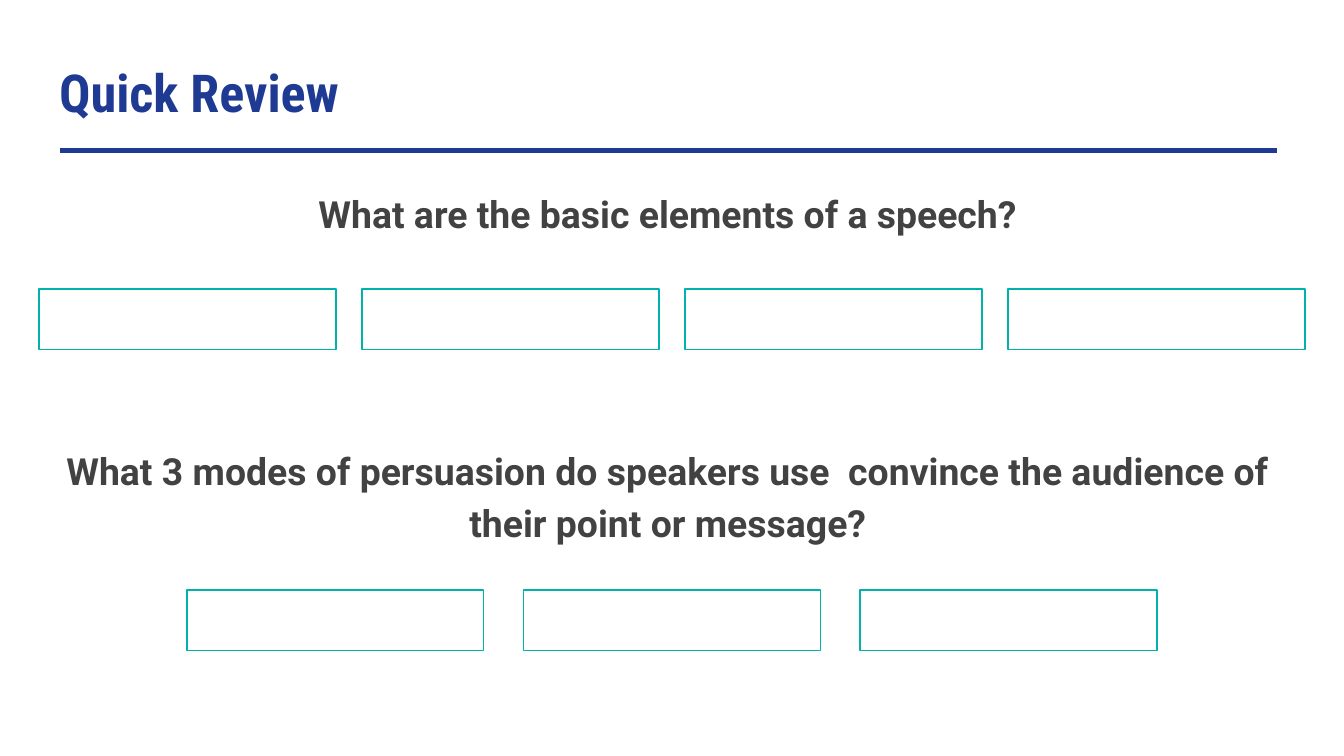
from lxml import etree
from pptx import Presentation, util as u
from pptx.dml.color import RGBColor
from pptx.enum import shapes, text
from pptx.oxml.ns import qn

NAVY, TEAL, GRAY = "1F3A93", "00B2A9", "424242"


def color(target, value):
    target.rgb = RGBColor.from_string(value)


def format_text(shape, font_name, size, font_color, alignment):
    frame = shape.text_frame
    frame.word_wrap = True
    frame.auto_size = text.MSO_AUTO_SIZE.NONE
    frame.vertical_anchor = text.MSO_ANCHOR.TOP
    frame.margin_left = frame.margin_right = u.Inches(0.1)
    frame.margin_top = frame.margin_bottom = u.Inches(0.1)
    for paragraph in frame.paragraphs:
        paragraph.alignment = alignment
        for run in paragraph.runs:
            run.font.name = font_name
            run.font.size = u.Pt(size)
            run.font.bold = True
            color(run.font.color, font_color)


presentation = Presentation()
presentation.slide_width = u.Inches(10)
presentation.slide_height = u.Inches(10 * 9 / 16)
slide = presentation.slides.add_slide(presentation.slide_layouts[5])

# Title and rule
title = slide.shapes.title
title.left, title.top = u.Inches(0.34), u.Inches(0.35)
title.width, title.height = u.Inches(9.32), u.Inches(0.63)
title.text_frame.text = "Quick Review"
format_text(title, "Roboto Condensed", 28, NAVY, text.PP_ALIGN.LEFT)

rule = slide.shapes.add_connector(
    shapes.MSO_CONNECTOR.STRAIGHT,
    u.Inches(0.45), u.Inches(1.12), u.Inches(9.5), u.Inches(1.12))
rule.line.width = u.Pt(2.25)
color(rule.line.color, NAVY)
etree.SubElement(rule._element.spPr, qn("a:effectLst"))

# Questions, spaced to leave room for the first row of answers
questions = slide.shapes.add_textbox(
    u.Inches(0.31), u.Inches(1.27), u.Inches(9.32), u.Inches(3.98))
questions.text_frame.text = (
    "What are the basic elements of a speech?\n"
    "What 3 modes of persuasion do speakers use  convince the audience of "
    "their point or message?")
format_text(questions, "Roboto", 20, GRAY, text.PP_ALIGN.CENTER)
for paragraph in questions.text_frame.paragraphs:
    paragraph.line_spacing = 1.15
questions.text_frame.paragraphs[1].space_before = u.Pt(110.5)

# Answer boxes, evenly spread between the first and last left edge of each row
for first, last, top, count in [(0.29, 7.5, 2.15, 4), (1.39, 6.4, 4.39, 3)]:
    pitch = (last - first) / (count - 1)
    for column in range(count):
        answer = slide.shapes.add_shape(
            shapes.MSO_SHAPE.RECTANGLE,
            u.Inches(first + column * pitch), u.Inches(top),
            u.Inches(2.21), u.Inches(0.45))
        answer.shadow.inherit = False
        answer.fill.background()
        answer.line.width = u.Pt(0.75)
        color(answer.line.color, TEAL)

presentation.save("out.pptx")
